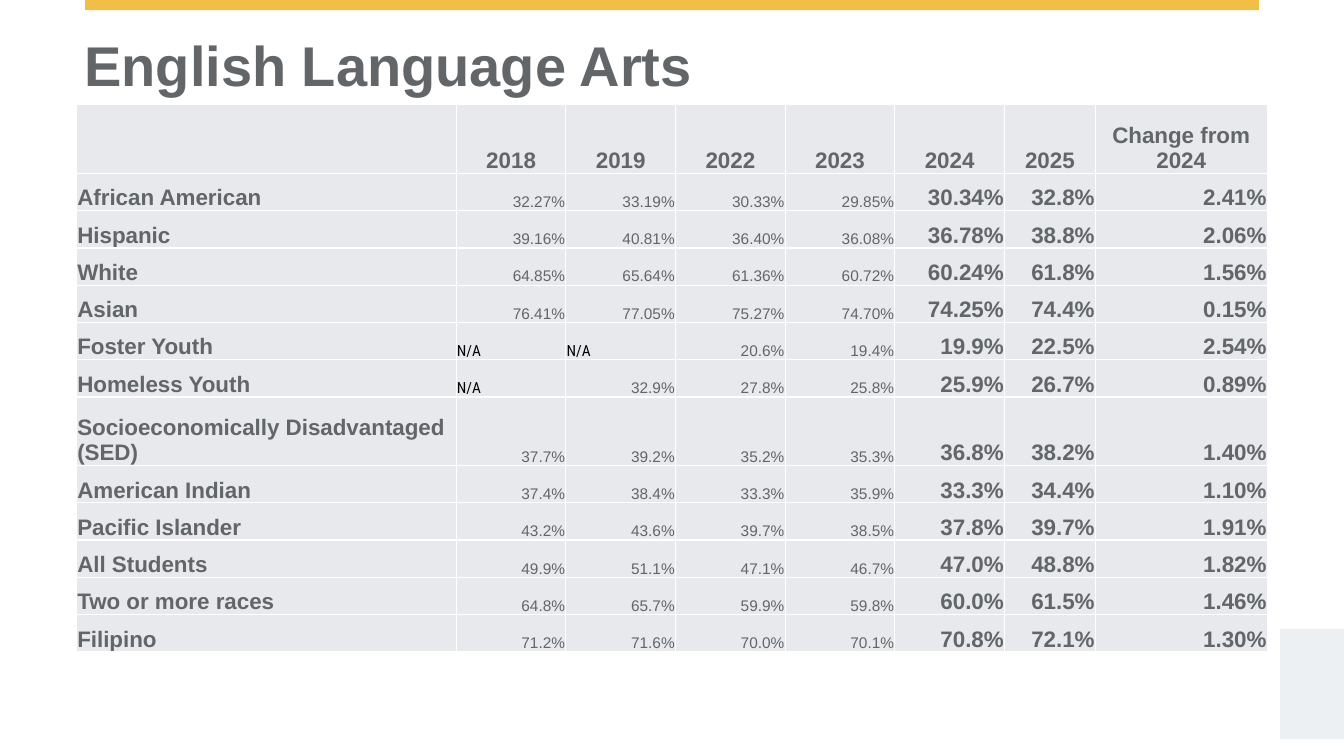
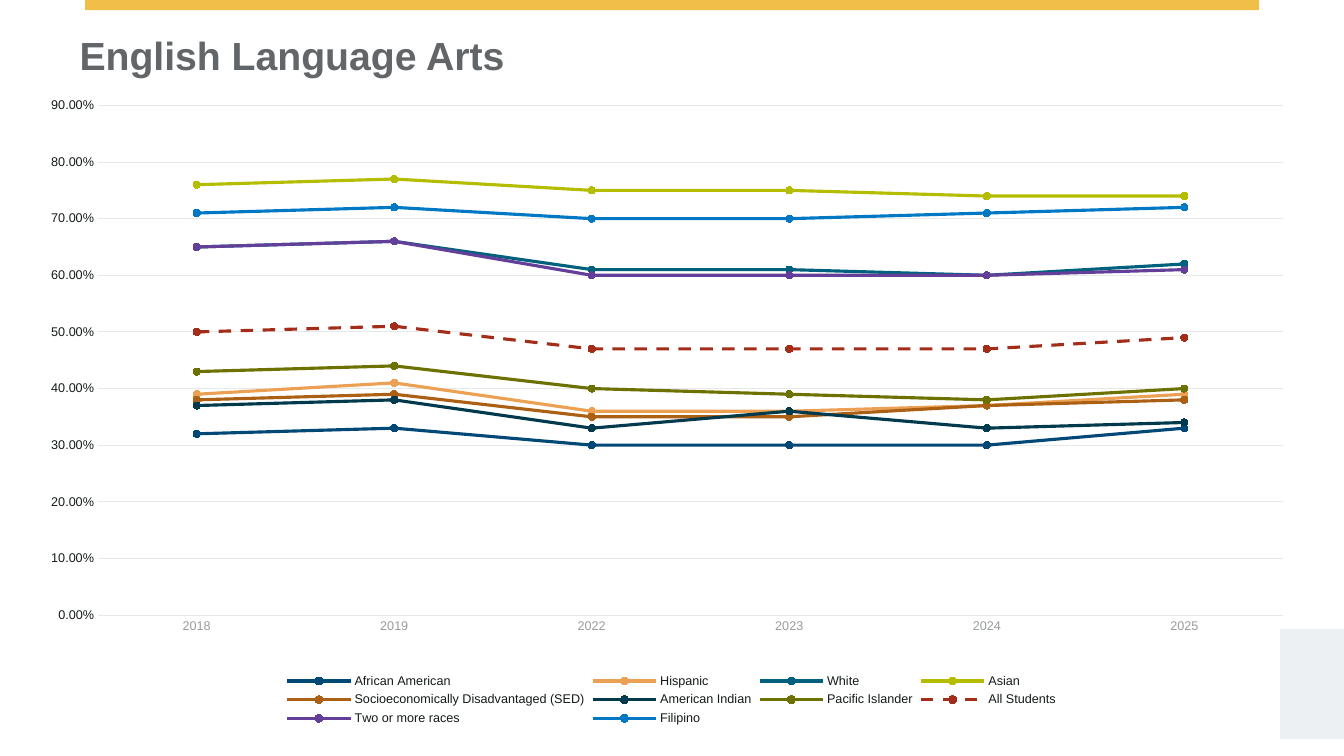
"""Build two slides on English Language Arts results: a table and a line chart."""
from pptx import Presentation
from pptx.chart.data import CategoryChartData
from pptx.dml.color import RGBColor
from pptx.enum.chart import XL_CHART_TYPE, XL_LEGEND_POSITION, XL_MARKER_STYLE, XL_TICK_MARK
from pptx.enum.dml import MSO_LINE
from pptx.enum.shapes import MSO_SHAPE
from pptx.enum.text import MSO_ANCHOR, PP_ALIGN
from pptx.oxml import parse_xml
from pptx.oxml.ns import nsdecls
from pptx.util import Inches, Pt

LEFT, CENTER, RIGHT = PP_ALIGN.LEFT, PP_ALIGN.CENTER, PP_ALIGN.RIGHT
BOTTOM = MSO_ANCHOR.BOTTOM
RECTANGLE = MSO_SHAPE.RECTANGLE
NO_TICKS = XL_TICK_MARK.NONE
CIRCLE = XL_MARKER_STYLE.CIRCLE
DASH = MSO_LINE.DASH
LINE_MARKERS = XL_CHART_TYPE.LINE_MARKERS
LEGEND_BOTTOM = XL_LEGEND_POSITION.BOTTOM

GOLD = RGBColor(0xF1, 0xBE, 0x48)
PALE = RGBColor(0xED, 0xF0, 0xF2)
SLATE = RGBColor(0x62, 0x66, 0x69)
CELL_GRAY = RGBColor(0xE7, 0xE9, 0xEC)
GRID_GRAY = RGBColor(0xE7, 0xE8, 0xE9)
LABEL_GRAY = RGBColor(0x98, 0x9C, 0x9F)
INK = RGBColor(0x14, 0x1A, 0x1B)
BLACK = RGBColor(0, 0, 0)
FONT = "Arial"
NARROW_FONT = "Roboto Condensed"

TITLE = "English Language Arts"
YEARS = ["2018", "2019", "2022", "2023", "2024", "2025"]
RESULTS = [
    ("African American", "32.27% 33.19% 30.33% 29.85% 30.34% 32.8% 2.41%"),
    ("Hispanic", "39.16% 40.81% 36.40% 36.08% 36.78% 38.8% 2.06%"),
    ("White", "64.85% 65.64% 61.36% 60.72% 60.24% 61.8% 1.56%"),
    ("Asian", "76.41% 77.05% 75.27% 74.70% 74.25% 74.4% 0.15%"),
    ("Foster Youth", "N/A N/A 20.6% 19.4% 19.9% 22.5% 2.54%"),
    ("Homeless Youth", "N/A 32.9% 27.8% 25.8% 25.9% 26.7% 0.89%"),
    ("Socioeconomically Disadvantaged (SED)", "37.7% 39.2% 35.2% 35.3% 36.8% 38.2% 1.40%"),
    ("American Indian", "37.4% 38.4% 33.3% 35.9% 33.3% 34.4% 1.10%"),
    ("Pacific Islander", "43.2% 43.6% 39.7% 38.5% 37.8% 39.7% 1.91%"),
    ("All Students", "49.9% 51.1% 47.1% 46.7% 47.0% 48.8% 1.82%"),
    ("Two or more races", "64.8% 65.7% 59.9% 59.8% 60.0% 61.5% 1.46%"),
    ("Filipino", "71.2% 71.6% 70.0% 70.1% 70.8% 72.1% 1.30%"),
]
SERIES_COLORS = {
    "African American": RGBColor(0x00, 0x48, 0x75),
    "Hispanic": RGBColor(0xEC, 0xA0, 0x53),
    "White": RGBColor(0x00, 0x61, 0x7F),
    "Asian": RGBColor(0xB5, 0xBD, 0x00),
    "Socioeconomically Disadvantaged (SED)": RGBColor(0xAC, 0x60, 0x13),
    "American Indian": RGBColor(0x00, 0x3A, 0x4C),
    "Pacific Islander": RGBColor(0x6D, 0x71, 0x00),
    "All Students": RGBColor(0xA3, 0x2D, 0x19),
    "Two or more races": RGBColor(0x63, 0x3F, 0x99),
    "Filipino": RGBColor(0x00, 0x78, 0xC4),
}

deck = Presentation()
deck.slide_width, deck.slide_height = Inches(13.33), Inches(7.5)


def place(left, top, width, height):
    """Turn percentages of the slide's size into lengths."""
    across, down = deck.slide_width / 100, deck.slide_height / 100
    return [int(length) for length in (left * across, top * down, width * across, height * down)]


def write(frame, text, size=16, bold=True, color=SLATE, font=FONT, align=LEFT):
    """Put one formatted paragraph into a text frame."""
    para = frame.paragraphs[0]
    para.alignment = align
    span = para.add_run()
    span.text = text
    span.font.size = Pt(size)
    span.font.bold = bold
    span.font.name = font
    span.font.color.rgb = color


pages = []
for title_place, title_size in [((5.55, 3.33, 71.49, 10.27), 40), ((5.18, 3.47, 34.21, 7.6), 28)]:
    page = deck.slides.add_slide(deck.slide_layouts[6])
    for band_place, color in [((6.34, 0, 87.32, 1.33), GOLD), ((95.24, 83.2, 4.76, 14.53), PALE)]:
        band = page.shapes.add_shape(RECTANGLE, *place(*band_place))
        band.shadow.inherit = False
        band.fill.solid()
        band.fill.fore_color.rgb = color
        band.line.fill.background()
    box = page.shapes.add_textbox(*place(*title_place))
    box.text_frame.word_wrap = True
    write(box.text_frame, TITLE, size=title_size)
    pages.append(page)
table_page, chart_page = pages

column_shares = [28.25] + [8.16] * 5 + [6.76, 12.79]
row_shares = [9.07] + [9.07 if "(SED)" in group else 4.93 for group, _ in RESULTS]
table_place = place(5.7, 13.87, sum(column_shares), sum(row_shares))
table = table_page.shapes.add_table(len(row_shares), len(column_shares), *table_place).table
table.first_row = table.horz_banding = False
for column, share in zip(table.columns, column_shares):
    column.width = int(deck.slide_width * share / 100)
for row, share in zip(table.rows, row_shares):
    row.height = int(deck.slide_height * share / 100)

table_rows = [["", *YEARS, "Change from 2024"]]
table_rows += [[group, *shares.split()] for group, shares in RESULTS]
for row_index, texts in enumerate(table_rows):
    for column_index, text in enumerate(texts):
        cell = table.cell(row_index, column_index)
        cell.vertical_anchor = BOTTOM
        cell.margin_left = cell.margin_right = cell.margin_top = Pt(0.5)
        cell.margin_bottom = 0
        for side in "LRTB":
            cell._tc.get_or_add_tcPr().append(parse_xml(
                f'<a:ln{side} {nsdecls("a")} w="{Pt(1)}"><a:solidFill>'
                f'<a:srgbClr val="FFFFFF"/></a:solidFill></a:ln{side}>'))
        cell.fill.solid()
        cell.fill.fore_color.rgb = CELL_GRAY
        if not text:
            continue
        if text == "N/A":
            style = dict(size=11, bold=False, color=BLACK, font=NARROW_FONT)
        elif row_index == 0:
            style = dict(align=CENTER)
        elif column_index == 0:
            style = dict(align=LEFT)
        elif column_index <= 4:
            style = dict(size=11, bold=False, align=RIGHT)
        else:
            style = dict(align=RIGHT)
        write(cell.text_frame, text, **style)

chart_data = CategoryChartData(number_format="0.00%")
chart_data.categories = YEARS
for group, shares in RESULTS:
    if group in SERIES_COLORS:
        yearly = shares.split()[:len(YEARS)]
        chart_data.add_series(group, [round(float(share.rstrip("%")) / 100, 2) for share in yearly])
chart = chart_page.shapes.add_chart(LINE_MARKERS, *place(2.55, 12.27, 94.82, 84.27), chart_data).chart
chart.has_title = False
chart.font.name = FONT
chart.font.size = Pt(10)
chart.font.color.rgb = SLATE
chart.has_legend = True
chart.legend.position = LEGEND_BOTTOM
chart.legend.include_in_layout = False

category_axis, value_axis = chart.category_axis, chart.value_axis
for part, color in [(category_axis.tick_labels, LABEL_GRAY), (value_axis.tick_labels, INK), (chart.legend, INK)]:
    part.font.name = FONT
    part.font.size = Pt(9)
    part.font.color.rgb = color
for axis in (category_axis, value_axis):
    axis.major_tick_mark = axis.minor_tick_mark = NO_TICKS
value_axis.minimum_scale, value_axis.maximum_scale, value_axis.major_unit = 0, 0.9, 0.1
value_axis.tick_labels.number_format = "0.00%"
value_axis.tick_labels.number_format_is_linked = False
value_axis.format.line.fill.background()
value_axis.has_major_gridlines = True
for line in (category_axis.format.line, value_axis.major_gridlines.format.line):
    line.color.rgb = GRID_GRAY
    line.width = Pt(0.75)

plot = chart.plots[0]
plot.vary_by_categories = False
for series in plot.series:
    color = SERIES_COLORS[series.name]
    series.smooth = False
    series.format.line.color.rgb = color
    series.format.line.width = Pt(2.25)
    if series.name == "All Students":
        series.format.line.dash_style = DASH
    series.marker.style = CIRCLE
    series.marker.size = 5
    series.marker.format.fill.solid()
    series.marker.format.fill.fore_color.rgb = color
    series.marker.format.line.color.rgb = color

plot_area = chart._chartSpace.chart.plotArea
for layout in plot_area.xpath("c:layout"):
    plot_area.remove(layout)
edges = "".join(f'<c:{name} val="{share}"/>' for name, share in [
    ("layoutTarget", "inner"), ("xMode", "edge"), ("yMode", "edge"),
    ("x", 0.05), ("y", 0.02), ("w", 0.93), ("h", 0.8)])
plot_area.insert(0, parse_xml(
    f'<c:layout {nsdecls("c")}><c:manualLayout>{edges}</c:manualLayout></c:layout>'))

deck.save("out.pptx")
